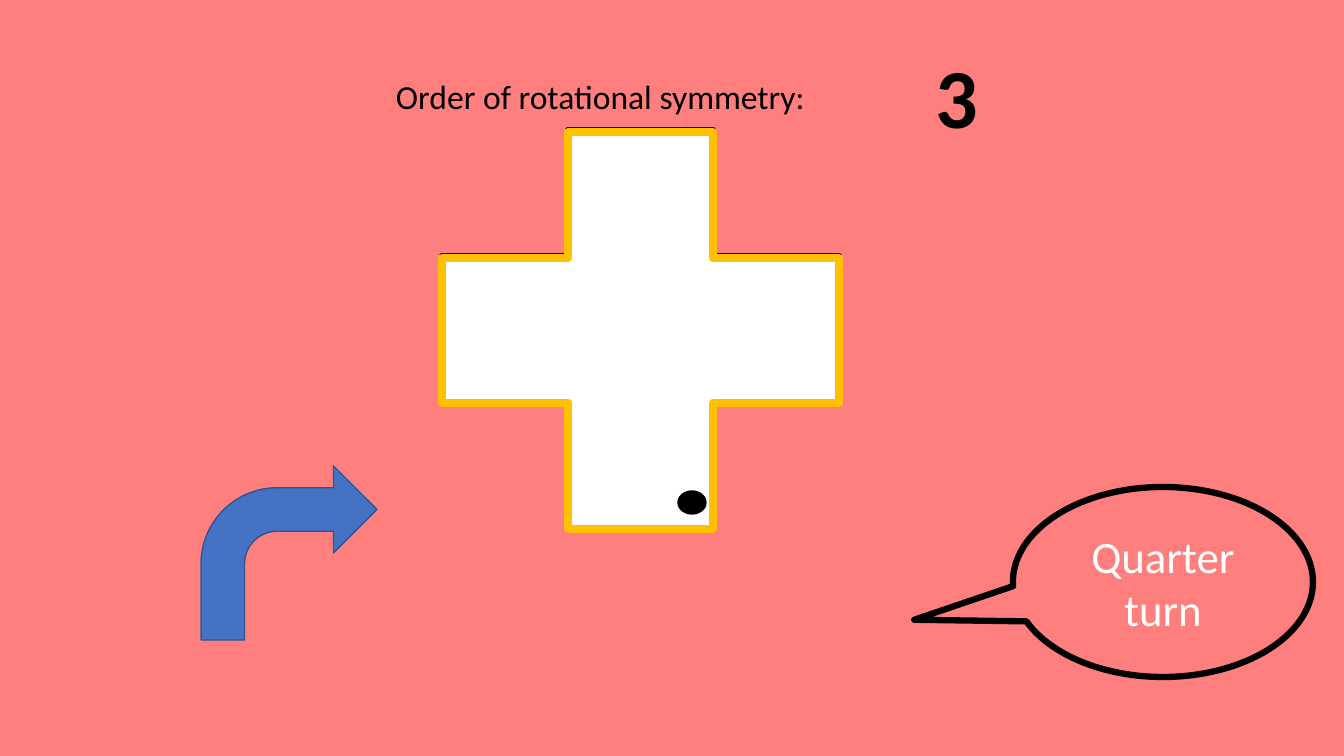
from pptx import Presentation
from pptx import util as u
from pptx.dml.color import RGBColor
from pptx.enum import shapes, text

PX = 914400 / 100.8
SLIDE_SIZE = (1344, 756)
FONT = "Calibri"
COLOURS = {
    "background": "FF7F7F",
    "black": "000000",
    "white": "FFFFFF",
    "gold": "FFC000",
    "blue": "4472C4",
    "dark blue": "325491",
}
KINDS = shapes.MSO_SHAPE


def px(length):
    return u.Emu(round(length * PX))


def colour(name):
    return RGBColor.from_string(COLOURS[name])


def write(shape, wording, size, ink, bold=False, align=text.PP_ALIGN.LEFT):
    frame = shape.text_frame
    frame.word_wrap = True
    paragraph = frame.paragraphs[0]
    paragraph.alignment = align
    run = paragraph.add_run()
    run.text = wording
    style = {"name": FONT, "size": u.Pt(size), "bold": bold}
    for attribute, value in style.items():
        setattr(run.font, attribute, value)
    run.font.color.rgb = colour(ink)


def add_text(slide, box, wording, size, bold=False):
    shape = slide.shapes.add_textbox(*map(px, box))
    write(shape, wording, size, "black", bold)


def add_shape(parent, kind, box, fill, line, width, adjustments=(), rotation=0):
    shape = parent.shapes.add_shape(kind, *map(px, box))
    shape.shadow.inherit = False
    shape.rotation = rotation
    for index, value in enumerate(adjustments):
        shape.adjustments[index] = value
    if fill:
        shape.fill.solid()
        shape.fill.fore_color.rgb = colour(fill)
    else:
        shape.fill.background()
    shape.line.color.rgb = colour(line)
    shape.line.width = u.Pt(width)
    return shape


def add_heading(slide, left, top):
    """Place the question and, to its right, the answer."""
    add_text(slide, (left + 540, top, 107, 112), "3", 60, bold=True)
    add_text(slide, (left, top + 31, 540, 50), "Order of rotational symmetry:", 24)


def add_cross(slide, left, top, side):
    """Place a fixed cross under a turned one that carries a marker dot."""
    arms = (0.318,)
    add_shape(slide, KINDS.CROSS, (left, top, side, side), "white", "black", 4.5, arms)
    turned = slide.shapes.add_group_shape()
    add_shape(turned, KINDS.CROSS, (left, top + 2, side, side), "white", "gold", 6,
              arms, rotation=180)
    add_shape(turned, KINDS.OVAL, (left + 236, top + 361, 28, 23), "black", "black", 1,
              rotation=180)


def add_callout(slide, box):
    callout = add_shape(slide, KINDS.OVAL_CALLOUT, box, None, "black", 4.5,
                        (-0.829, 0.199))
    callout.text_frame.vertical_anchor = text.MSO_ANCHOR.MIDDLE
    write(callout, "Quarter turn", 32, "white", align=text.PP_ALIGN.CENTER)


def add_turn_arrow(slide, box):
    add_shape(slide, KINDS.BENT_ARROW, box, "blue", "dark blue", 1)


def main():
    presentation = Presentation()
    presentation.slide_width, presentation.slide_height = map(px, SLIDE_SIZE)
    slide = presentation.slides.add_slide(presentation.slide_layouts[6])
    slide.background.fill.solid()
    slide.background.fill.fore_color.rgb = colour("background")
    add_heading(slide, 386, 40)
    add_cross(slide, 442, 130, 397)
    add_callout(slide, (1013, 487, 300, 190))
    add_turn_arrow(slide, (201, 466, 176, 174))
    presentation.save("out.pptx")


if __name__ == "__main__":
    main()
